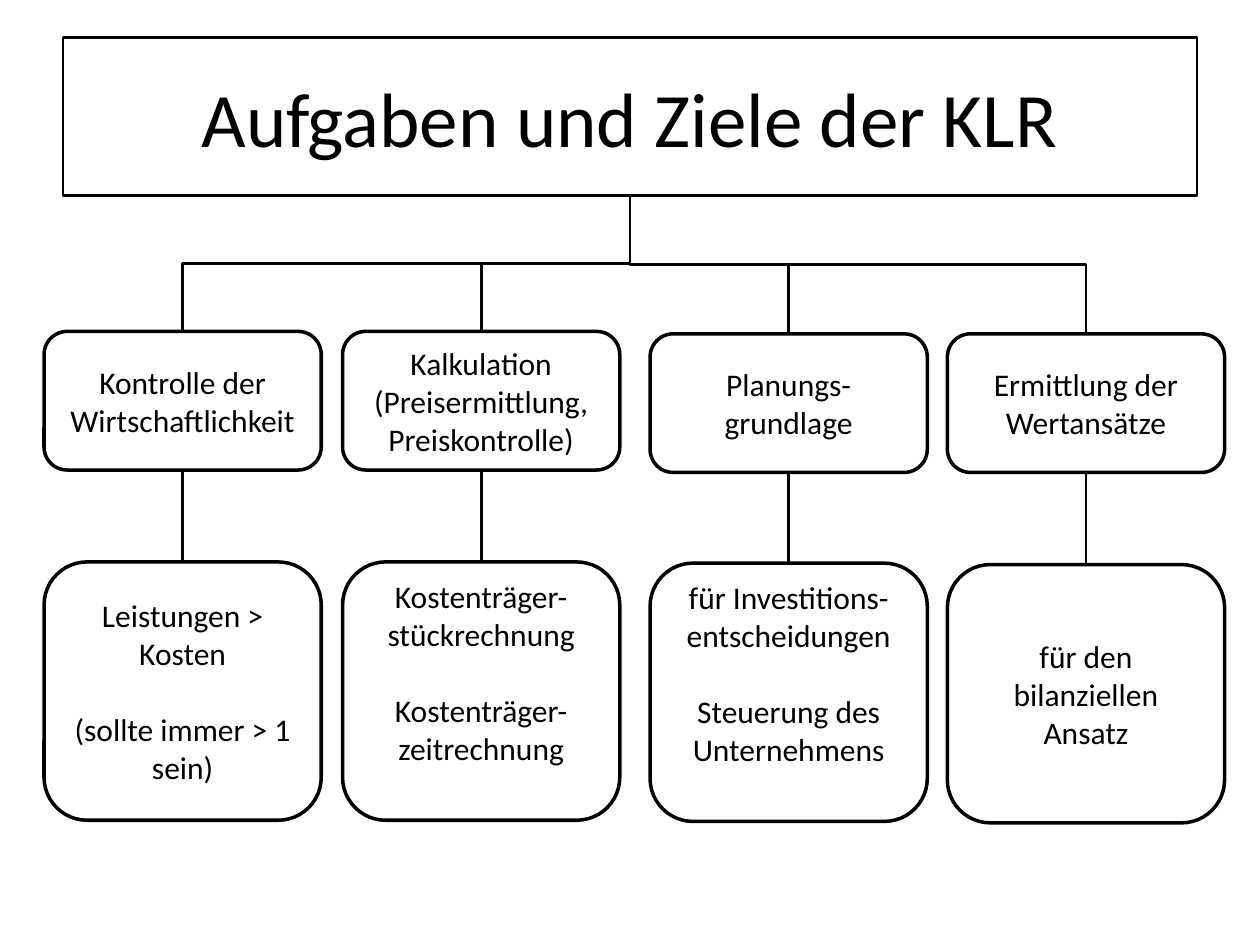
"""Build the slide on the tasks and goals of cost accounting."""
from lxml.etree import SubElement
from pptx import Presentation
from pptx.dml.color import RGBColor
from pptx.enum.shapes import MSO_CONNECTOR, MSO_SHAPE
from pptx.enum.text import MSO_ANCHOR, PP_ALIGN
from pptx.oxml.ns import qn
from pptx.util import Pt

BLACK = RGBColor(0, 0, 0)
WHITE = RGBColor(255, 255, 255)
FONT = "Calibri"
TITLE = "Aufgaben und Ziele der KLR"
TITLE_AREA = (36, 21.6, 648, 90)
BOX_WIDTH, TASK_HEIGHT, DETAIL_HEIGHT = 158.4, 79.2, 147.6
BLANK_LINE = 22
INSET = 3.6

# Each column: left, task top, task, detail top, detail paragraphs, spare line below
COLUMNS = [
    (25.2, 189.4, "Kontrolle der\vWirtschaftlichkeit",
     321.1, ["Leistungen > Kosten", "(sollte immer > 1 sein)"], 0),
    (195.8, 189.4, "Kalkulation\v(Preisermittlung,\vPreiskontrolle)",
     321.1, ["Kostenträger-stückrechnung", "Kostenträger-", "zeitrechnung"], BLANK_LINE),
    (371.5, 190.8, "Planungs-grundlage",
     321.8, ["für Investitions-entscheidungen", "Steuerung des Unternehmens"], BLANK_LINE),
    (541.4, 190.8, "Ermittlung der\vWertansätze",
     322.6, ["für den bilanziellen Ansatz"], 0),
]


def add_box(page, kind, area, paragraphs, size, line_width, spare=0):
    box = page.shapes.add_shape(kind, *map(Pt, area))
    box.shadow.inherit = False
    box.fill.solid()
    box.fill.fore_color.rgb = WHITE
    box.line.color.rgb = BLACK
    box.line.width = Pt(line_width)
    frame = box.text_frame
    frame.word_wrap = True
    frame.vertical_anchor = MSO_ANCHOR.MIDDLE
    frame.margin_bottom = Pt(INSET + spare)
    frame.text = "\n".join(paragraphs)
    for index, para in enumerate(frame.paragraphs):
        para.alignment = PP_ALIGN.CENTER
        if index == 1:
            para.space_before = Pt(BLANK_LINE)
        for span in para.runs:
            span.font.name = FONT
            span.font.size = Pt(size)
            span.font.color.rgb = BLACK


def add_line(page, kind, *ends):
    line = page.shapes.add_connector(kind, *map(Pt, ends))
    line.line.color.rgb = BLACK
    line.line.width = Pt(1.5)
    SubElement(line._element.spPr, qn("a:effectLst"))
    return line


def add_branch(page, start_x, start_y, end_x, end_y):
    """Draw an elbow that leaves downwards, as a turned connector."""
    middle_x, middle_y = (start_x + end_x) / 2, (start_y + end_y) / 2
    half_width, half_height = (end_y - start_y) / 2, abs(end_x - start_x) / 2
    degrees = 90
    if end_x > start_x:
        half_width, degrees = -half_width, 270
    branch = add_line(page, MSO_CONNECTOR.ELBOW,
                      middle_x - half_width, middle_y - half_height,
                      middle_x + half_width, middle_y + half_height)
    branch._element.spPr.find(qn("a:xfrm")).set("rot", str(degrees * 60000))


def main():
    deck = Presentation()
    deck.slide_width, deck.slide_height = Pt(720), Pt(540)
    page = deck.slides.add_slide(deck.slide_layouts[6])
    add_box(page, MSO_SHAPE.RECTANGLE, TITLE_AREA, [TITLE], 44, 1.5)
    left, top, width, height = TITLE_AREA
    root_x, root_y = left + width / 2, top + height
    for left, task_top, task, detail_top, details, spare in COLUMNS:
        center = left + BOX_WIDTH / 2
        add_branch(page, root_x, root_y, center, task_top)
        add_line(page, MSO_CONNECTOR.STRAIGHT,
                 center, task_top + TASK_HEIGHT, center, detail_top)
        add_box(page, MSO_SHAPE.ROUNDED_RECTANGLE,
                (left, task_top, BOX_WIDTH, TASK_HEIGHT), [task], 18, 2)
        add_box(page, MSO_SHAPE.ROUNDED_RECTANGLE,
                (left, detail_top, BOX_WIDTH, DETAIL_HEIGHT), details, 18, 2, spare)
    deck.save("out.pptx")


if __name__ == "__main__":
    main()
